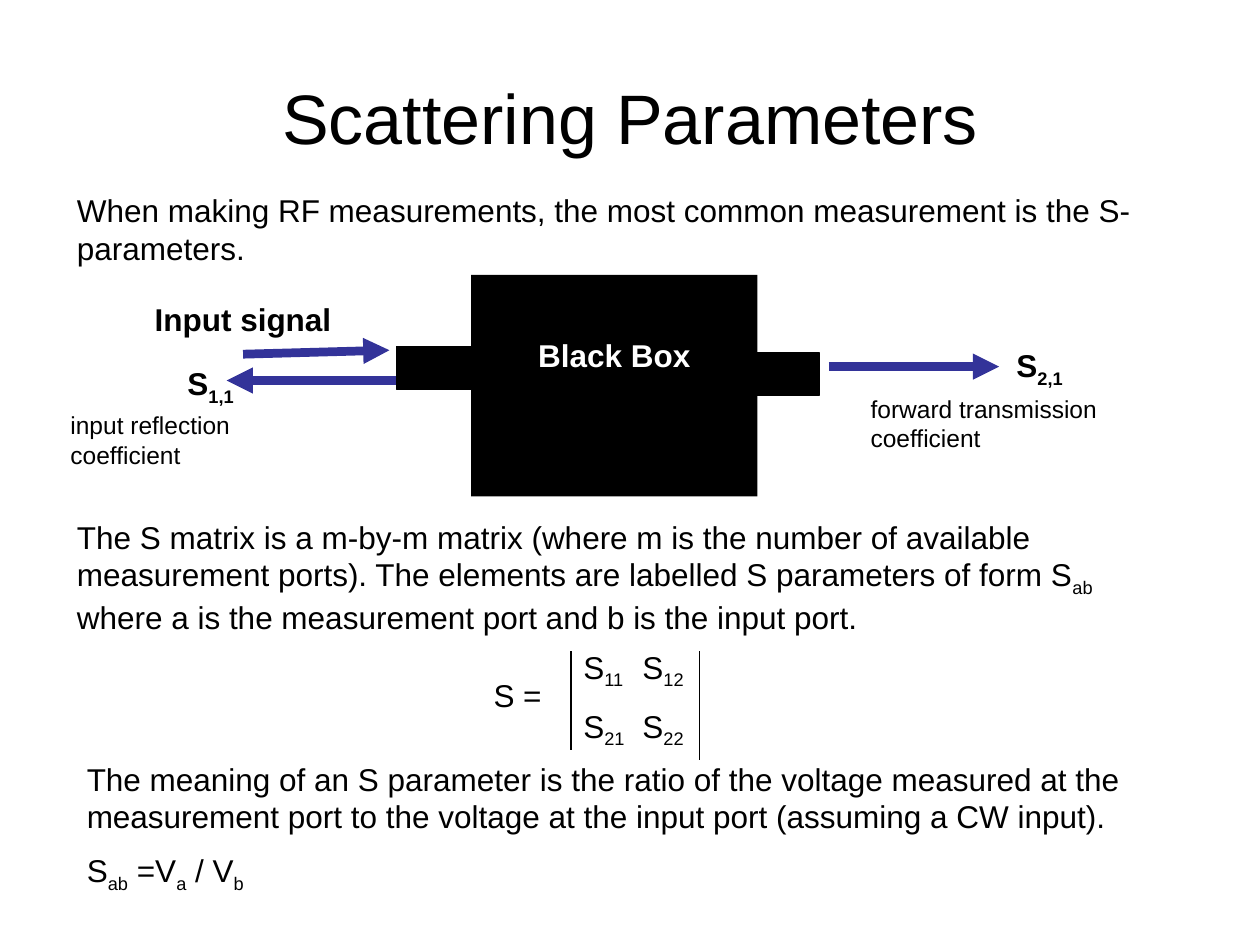
from pptx import Presentation
from pptx.dml.color import RGBColor
from pptx.enum.shapes import MSO_CONNECTOR as Connector, MSO_SHAPE as Shape
from pptx.enum.text import MSO_ANCHOR as Anchor, PP_ALIGN as Align
from pptx.oxml.ns import qn
from pptx.util import Cm, Pt
from lxml.etree import SubElement

BLACK = "000000"
WHITE = "FFFFFF"
SIGNAL_BLUE = "333399"


def color(value):
    return RGBColor.from_string(value)


def format_paragraph(paragraph, size=18, fill=BLACK, bold=False):
    font = paragraph.font
    font.name = "Arial"
    font.size = Pt(size)
    font.bold = bold
    font.color.rgb = color(fill)


def add_runs(paragraph, pieces):
    for index, piece in enumerate(pieces):
        run = paragraph.add_run()
        run.text = piece
        if index % 2:
            run._r.get_or_add_rPr().set("baseline", "-25000")


def add_text(slide, left, top, width, height, *paragraphs, size=18, bold=False):
    """Each paragraph is a tuple that alternates plain and subscript pieces."""
    box = slide.shapes.add_textbox(Cm(left), Cm(top), Cm(width), Cm(height))
    frame = box.text_frame
    frame.word_wrap = True
    for index, pieces in enumerate(paragraphs):
        paragraph = frame.add_paragraph() if index else frame.paragraphs[0]
        if index:
            paragraph.space_before = Pt(9)
        format_paragraph(paragraph, size, bold=bold)
        add_runs(paragraph, pieces)


def add_caption(slide, left, top, width, first_line, second_line):
    box = slide.shapes.add_textbox(Cm(left), Cm(top), Cm(width), Cm(1.3))
    box.text_frame.word_wrap = True
    paragraph = box.text_frame.paragraphs[0]
    format_paragraph(paragraph, 14)
    paragraph.add_run().text = first_line
    paragraph.add_line_break()
    paragraph.add_run().text = second_line


def add_block(slide, left, top, width, height):
    block = slide.shapes.add_shape(
        Shape.RECTANGLE, Cm(left), Cm(top), Cm(width), Cm(height))
    block.shadow.inherit = False
    block.fill.solid()
    block.fill.fore_color.rgb = color(BLACK)
    block.line.fill.background()
    return block


def add_port(slide, left, top):
    port = add_block(slide, left, top, 1.63, 0.86)
    port.line.color.rgb = color(BLACK)
    port.line.width = Pt(0.75)


def add_black_box(slide):
    box = add_block(slide, 9.5, 5.54, 5.77, 4.47)
    frame = box.text_frame
    frame.vertical_anchor = Anchor.TOP
    frame.margin_top = Cm(1.23)
    paragraph = frame.paragraphs[0]
    paragraph.text = "Black Box"
    paragraph.alignment = Align.CENTER
    format_paragraph(paragraph, fill=WHITE, bold=True)


def add_line(slide, start, end, stroke=BLACK, width=0.75):
    points = [Cm(value) for value in (*start, *end)]
    line = slide.shapes.add_connector(Connector.STRAIGHT, *points)
    line.line.color.rgb = color(stroke)
    line.line.width = Pt(width)
    SubElement(line._element.spPr, qn("a:effectLst"))
    return line


def add_signal_arrow(slide, start, end):
    arrow = add_line(slide, start, end, SIGNAL_BLUE, 5)
    SubElement(arrow.line._get_or_add_ln(), qn("a:tailEnd"), type="triangle")


def add_title(slide):
    title = slide.shapes.title
    title.left, title.top = Cm(1.27), Cm(0.76)
    title.width, title.height = Cm(22.86), Cm(3.18)
    title.text_frame.vertical_anchor = Anchor.MIDDLE
    paragraph = title.text_frame.paragraphs[0]
    paragraph.text = "Scattering Parameters"
    paragraph.alignment = Align.CENTER
    format_paragraph(paragraph, 40)


def add_diagram(slide):
    add_black_box(slide)
    add_signal_arrow(slide, (4.9, 7.14), (7.85, 7.06))
    add_signal_arrow(slide, (16.71, 7.39), (20.14, 7.39))
    add_signal_arrow(slide, (7.98, 7.67), (4.57, 7.67))
    add_port(slide, 8, 6.99)
    add_port(slide, 14.88, 7.11)
    add_text(slide, 3.53, 7.21, 2.26, 1.02, ("S", "1,1"), bold=True)
    add_text(slide, 20.24, 6.86, 2.26, 1.02, ("S", "2,1"), bold=True)
    add_text(slide, 2.87, 5.92, 4.45, 1.02, ("Input signal",), bold=True)
    add_caption(slide, 1.17, 8.15, 6.07, "input reflection ", "coefficient")
    add_caption(slide, 17.3, 7.82, 7.42, "forward transmission ", "coefficient")


def add_matrix(slide):
    left, top, step = 11.51, 12.93, 1.19
    for row in range(2):
        for column in range(2):
            add_text(slide, left + column * step, top + row * step, 2.59, 1.02,
                     ("S", f"{row + 1}{column + 1}"))
    add_line(slide, (left, 13.13), (left, 15.11))
    add_line(slide, (14.1, 13.13), (14.1, 15.32))
    add_text(slide, 9.7, 13.51, 2.39, 1.02, ("S =",))


def main():
    presentation = Presentation()
    presentation.slide_width, presentation.slide_height = Cm(25.4), Cm(19.05)
    slide = presentation.slides.add_slide(presentation.slide_layouts[5])
    add_title(slide)
    add_diagram(slide)
    add_text(slide, 1.3, 3.73, 22.81, 1.78,
             ("When making RF measurements, the most common measurement is "
              "the S-parameters.",))
    add_text(slide, 1.3, 10.31, 21.79, 2.54,
             ("The S matrix is a m-by-m matrix (where m is the number of "
              "available measurement ports). The elements are labelled "
              "S parameters of form S", "ab",
              " where a is the measurement port and b is the input port."))
    add_matrix(slide)
    add_text(slide, 1.5, 15.19, 22.4, 2.92,
             ("The meaning of an S parameter is the ratio of the voltage "
              "measured at the measurement port to the voltage at the input "
              "port (assuming a CW input).",),
             ("S", "ab", " =V", "a", " / V", "b"))
    presentation.save("out.pptx")


if __name__ == "__main__":
    main()
